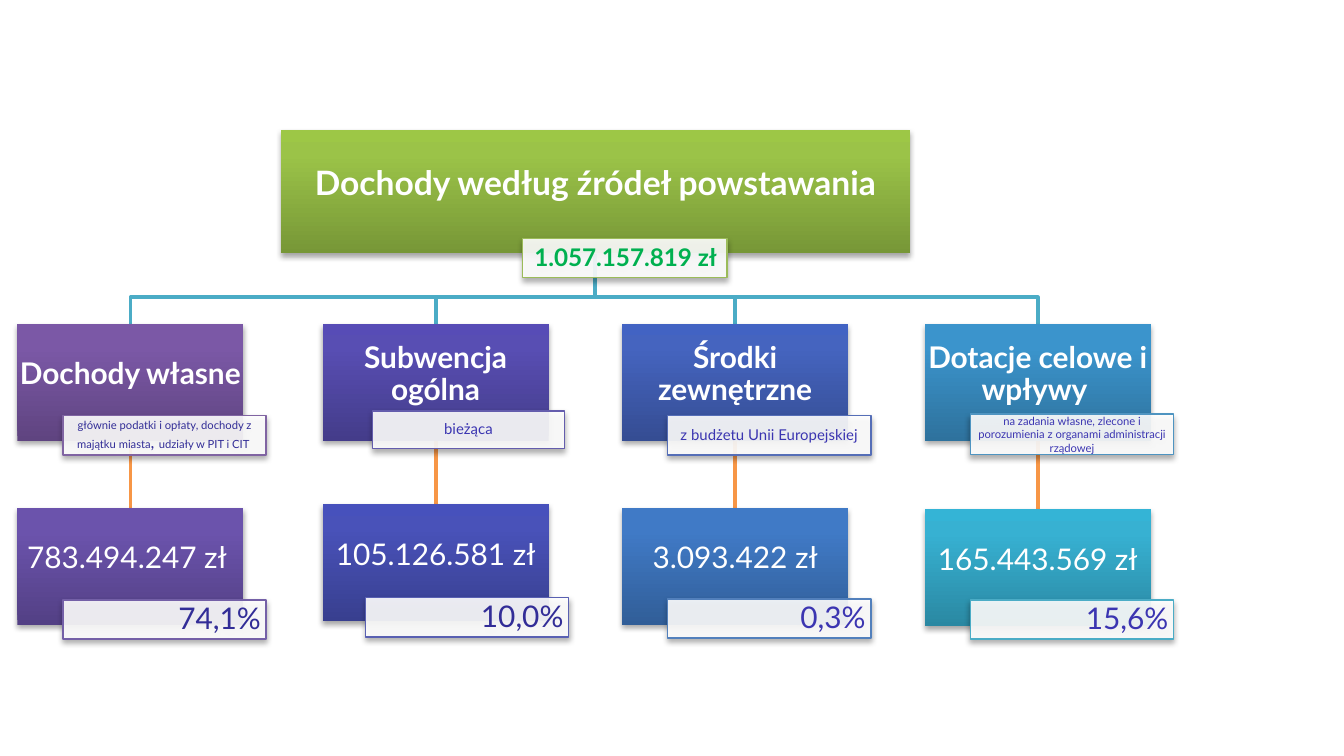
from copy import deepcopy

from pptx import Presentation
from pptx.dml.color import RGBColor as Rgb
from pptx.enum.shapes import MSO_CONNECTOR as Link, MSO_SHAPE as Kind
from pptx.enum.text import MSO_ANCHOR as Anchor, PP_ALIGN as Align
from pptx.oxml import parse_xml
from pptx.oxml.ns import nsdecls, qn
from pptx.util import Cm, Pt

HUES = {
    "white": "FFFFFF", "green": "00B050", "navy": "322D97", "blue": "3B35B1",
    "elbow": "4BACC6", "drop": "F79646",
    "root": ("779737", "9BC348", "9DC746", "9BBB59"),
    "own": ("5F4480", "7B58A6", "7C57A8", "8064A2"),
    "own sum": ("534085", "6B53AC", "6B52AF", "7460A7"),
    "state": ("443C8A", "584EB3", "574CB6", "645DAD"),
    "state sum": ("383F8F", "4952B9", "4751BC", "5960B2"),
    "union": ("354D93", "4564BF", "4263C3", "556EB7"),
    "union sum": ("315E98", "407AC6", "3E7AC9", "5280BC"),
    "grant": ("2E729D", "3B94CC", "3995CF", "4E94C1"),
    "grant sum": ("2A88A2", "37B1D2", "34B4D6", "4BACC6"),
}


class Chart:
    font = "Lato"
    shade = (
        f'<a:outerShdw {nsdecls("a")} blurRad="39370" dist="22860" dir="5400000" '
        'rotWithShape="0"><a:srgbClr val="000000"><a:alpha val="35000"/>'
        '</a:srgbClr></a:outerShdw>'
    )

    def __init__(self, slide):
        self.slide = slide
        self.shapes = slide.shapes

    def rect(self, x, y, w, h):
        shape = self.shapes.add_shape(Kind.RECTANGLE, Cm(x), Cm(y), Cm(w), Cm(h))
        shape.shadow.inherit = False
        shape._element.spPr.find(qn("a:effectLst")).append(parse_xml(self.shade))
        return shape

    def label(self, shape, parts, hue, align, pads, bold=False, lead=0.9):
        frame = shape.text_frame
        frame.word_wrap = True
        frame.vertical_anchor = Anchor.MIDDLE
        left, top, right, base = (Cm(pad) for pad in pads)
        frame.margin_left, frame.margin_top = left, top
        frame.margin_right, frame.margin_bottom = right, base
        para = frame.paragraphs[0]
        para.alignment = align
        para.line_spacing = lead
        for text, size in parts:
            run = para.add_run()
            run.text = text
            run.font.name = self.font
            run.font.size = Pt(size)
            run.font.bold = bold
            run.font.color.rgb = Rgb.from_string(HUES[hue])

    def block(self, box, tone, text, size, bold=True):
        shape = self.rect(*box)
        shape.line.fill.background()
        shape.fill.gradient()
        shape.fill.gradient_angle = 90
        stops = shape._element.spPr.find(qn("a:gradFill")).find(qn("a:gsLst"))
        stops.insert(1, deepcopy(stops[0]))
        for stop, place, code in zip(shape.fill.gradient_stops, (0, 0.8, 1), HUES[tone]):
            stop.position = place
            stop.color.rgb = Rgb.from_string(code)
        self.label(shape, [(text, size)], "white", Align.CENTER,
                   (0.03, 0.03, 0.03, 0.3), bold)

    def tag(self, box, tone, parts, hue, align=Align.RIGHT, bold=False, lead=0.9):
        shape = self.rect(*box)
        shape.fill.solid()
        shape.fill.fore_color.rgb = Rgb.from_string(HUES["white"])
        tint = shape._element.spPr.find(qn("a:solidFill"))[0]
        tint.append(parse_xml(f'<a:alpha {nsdecls("a")} val="90000"/>'))
        shape.line.color.rgb = Rgb.from_string(HUES[tone][3])
        shape.line.width = Pt(0.75)
        side = 0.1 if align == Align.RIGHT else 0.05
        edge = 0.03 if lead < 1 else 0
        self.label(shape, parts, hue, align, (side, edge, side, edge), bold, lead)

    def elbow(self, spots):
        start, *rest = [(Cm(x), Cm(y)) for x, y in spots]
        route = self.shapes.build_freeform(*start)
        route.add_line_segments(rest, close=False)
        shape = route.convert_to_shape()
        shape.shadow.inherit = False
        shape.fill.background()
        self.ink(shape, "elbow")

    def drop(self, x, top, base):
        line = self.shapes.add_connector(Link.STRAIGHT, Cm(x), Cm(top), Cm(x), Cm(base))
        line._element.spPr.append(parse_xml(f'<a:effectLst {nsdecls("a")}/>'))
        self.ink(line, "drop")

    def ink(self, shape, hue):
        shape.line.color.rgb = Rgb.from_string(HUES[hue])
        shape.line.width = Pt(2)


WIDE, TALL, TOP = 4.27, 2.21, 6.12
MID = 11.25

SETS = [
    ("own", 0.33, 9.6, "Dochody własne ", (1.19, 7.86, 3.84, 0.74),
     [("głównie podatki i opłaty, dochody z majątku miasta", 6), (", ", 9),
      ("udziały w PIT i CIT ", 6)], "navy", 1,
     "783.494.247 zł ", (1.19, 11.34), "74,1%", "navy"),
    ("state", 6.1, 9.53, "Subwencja ogólna", (7.04, 7.77, 3.63, 0.71),
     [("bieżąca", 8)], "blue", 0.9,
     "105.126.581 zł", (6.91, 11.3), "10,0%", "navy"),
    ("union", 11.76, 9.6, "Środki zewnętrzne", (12.62, 7.86, 3.84, 0.74),
     [("z budżetu Unii Europejskiej", 8)], "blue", 0.9,
     "3.093.422 zł", (12.62, 11.32), "0,3%", "blue"),
    ("grant", 17.48, 9.63, "Dotacje celowe i wpływy ", (18.34, 7.83, 3.84, 0.76),
     [("na zadania własne, zlecone i porozumienia z organami administracji rządowej", 6)],
     "blue", 1, "165.443.569 zł", (18.34, 11.34), "15,6%", "blue"),
]


def main():
    deck = Presentation()
    deck.slide_width, deck.slide_height = Cm(25.4), Cm(14.29)
    chart = Chart(deck.slides.add_slide(deck.slide_layouts[6]))

    for _, x, low, *_ in SETS:
        mid = x + WIDE / 2
        chart.drop(mid, TOP + TALL, low)
        chart.elbow([(MID, 4.8), (MID, 5.62), (mid, 5.62), (mid, TOP)])

    chart.block((5.31, 2.45, 11.89, 2.34), "root",
                "Dochody według źródeł powstawania", 18)
    chart.tag((9.88, 4.51, 3.86, 0.74), "root", [("1.057.157.819 zł ", 13)],
              "green", bold=True)

    for tone, x, low, name, box, note, hue, lead, total, spot, share, tint in SETS:
        chart.block((x, TOP, WIDE, TALL), tone, name, 16)
        chart.tag(box, tone, note, hue, Align.CENTER, lead=lead)
        chart.block((x, low, WIDE, TALL), f"{tone} sum", total, 16, bold=False)
        chart.tag((*spot, 3.84, 0.74), f"{tone} sum", [(share, 16)], tint)

    deck.save("out.pptx")


if __name__ == "__main__":
    main()
